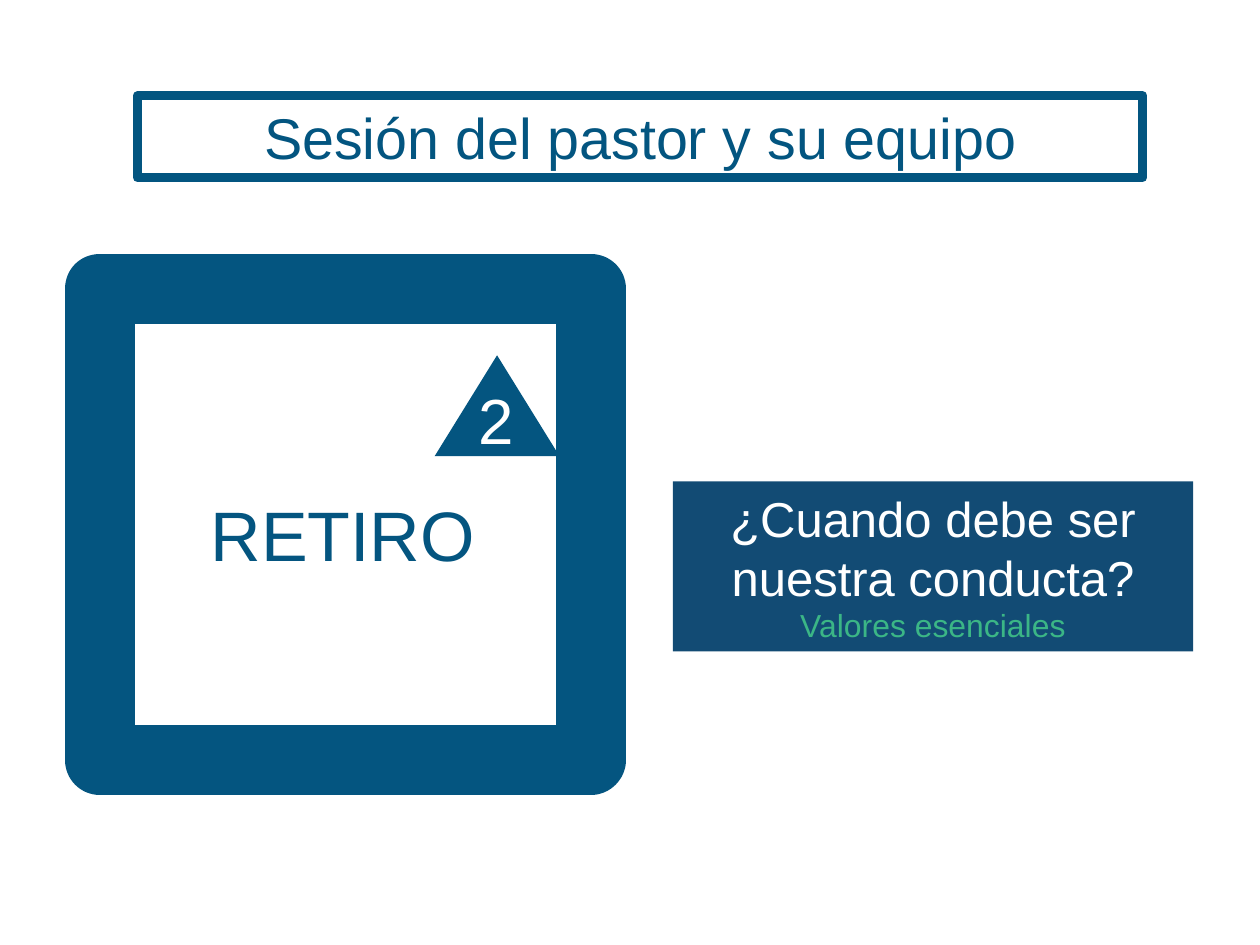
from pptx import Presentation
from pptx.dml.color import RGBColor
from pptx.enum.shapes import MSO_SHAPE
from pptx.enum.text import MSO_ANCHOR, MSO_AUTO_SIZE, PP_ALIGN
from pptx.util import Inches, Pt

RECTANGLE = MSO_SHAPE.RECTANGLE
TRIANGLE = MSO_SHAPE.ISOSCELES_TRIANGLE
MIDDLE = MSO_ANCHOR.MIDDLE
NO_AUTOFIT = MSO_AUTO_SIZE.NONE
LEFT, CENTER = PP_ALIGN.LEFT, PP_ALIGN.CENTER

BLUE, TITLE_BLUE, NAVY = "045580", "035580", "124B74"
GREEN, WHITE = "3BB686", "FFFFFF"


def paint(shape, fill=None, line=None, width=0):
    for target, color in ((shape.fill, fill), (shape.line.fill, line)):
        if color:
            target.solid()
            target.fore_color.rgb = RGBColor.from_string(color)
        else:
            target.background()
    if line:
        shape.line.width = Pt(width)


def write(shape, text, size, color, align=CENTER, append=False):
    frame = shape.text_frame
    frame.word_wrap = True
    frame.auto_size = NO_AUTOFIT
    frame.vertical_anchor = MIDDLE
    paragraph = frame.add_paragraph() if append else frame.paragraphs[0]
    paragraph.alignment = align
    run = paragraph.add_run()
    run.text = text
    run.font.name = "Arial"
    run.font.size = Pt(size)
    run.font.color.rgb = RGBColor.from_string(color)


presentation = Presentation()
presentation.slide_width = Inches(10)
presentation.slide_height = Inches(7.5)
slide = presentation.slides.add_slide(presentation.slide_layouts[5])
shapes = slide.shapes

title = shapes.title
title.left, title.top = Inches(1.09), Inches(0.76)
title.width, title.height = Inches(7.98), Inches(0.65)
paint(title, fill=WHITE, line=TITLE_BLUE, width=5)
write(title, "Sesión del pastor y su equipo", 32.8, TITLE_BLUE)

frame_box = shapes.add_shape(RECTANGLE, Inches(0.79), Inches(2.29), Inches(3.9), Inches(3.74))
frame_box.shadow.inherit = False
paint(frame_box, line=BLUE, width=40)

retreat_label = shapes.add_textbox(Inches(1.3), Inches(3.85), Inches(2.84), Inches(0.77))
write(retreat_label, "RETIRO", 40, BLUE)

marker = shapes.add_shape(TRIANGLE, Inches(3.45), Inches(2.82), Inches(0.99), Inches(0.8))
marker.shadow.inherit = False
paint(marker, fill=BLUE)

marker_number = shapes.add_textbox(Inches(3.7), Inches(2.97), Inches(0.61), Inches(0.71))
write(marker_number, "2", 36.4, WHITE, align=LEFT)

question_box = shapes.add_shape(RECTANGLE, Inches(5.34), Inches(3.82), Inches(4.13), Inches(1.35))
question_box.shadow.inherit = False
paint(question_box, fill=NAVY)
write(question_box, "¿Cuando debe ser nuestra conducta?", 28, WHITE)
write(question_box, "Valores esenciales", 18.2, GREEN, append=True)

presentation.save("out.pptx")
